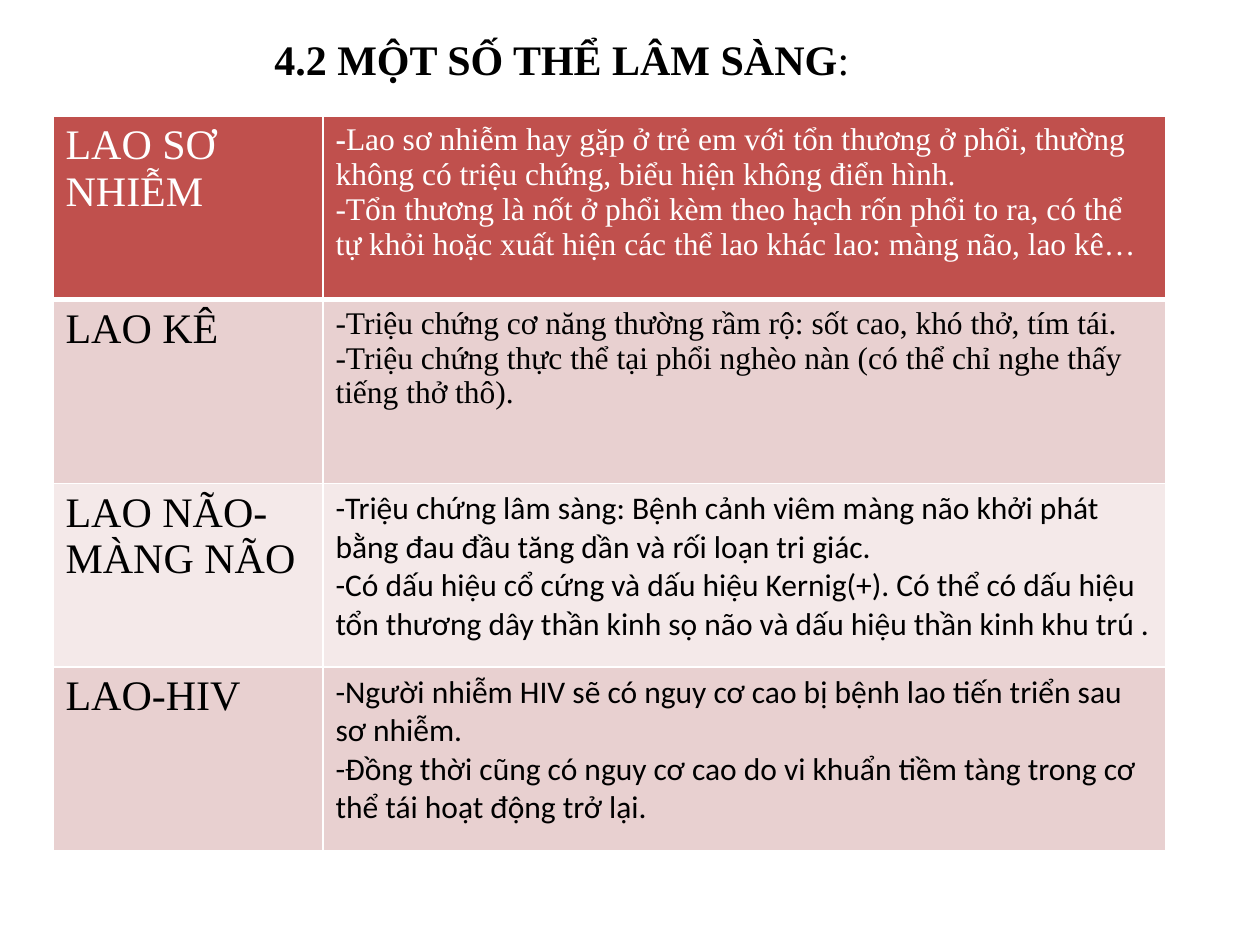
"""Build a slide with a table of the clinical forms of tuberculosis."""
import pptx
import pptx.dml.color
import pptx.enum.text
import pptx.oxml
import pptx.oxml.ns
import pptx.util

PX = 914400 / 126
COLORS = {
    "black": "000000",
    "white": "FFFFFF",
    "header": "C0504D",
    "dark_band": "E8D0D0",
    "light_band": "F4E9E9",
}
SERIF = "Times New Roman"
SANS = "Calibri"
TITLE = [("4.2 MỘT SỐ THỂ LÂM SÀNG", True), (": ", False)]
ROWS = [
    ("header", "white", SERIF, "LAO SƠ NHIỄM", [
        [("-", True), ("Lao sơ nhiễm hay gặp ở trẻ em với tổn thương ở phổi, thường không có triệu chứng, biểu hiện không điển hình.", False)],
        [("-Tổn thương là nốt ở phổi kèm theo hạch rốn phổi to ra, có thể tự khỏi hoặc xuất hiện các thể lao khác lao: màng não, lao kê…", False)],
    ]),
    ("dark_band", "black", SERIF, "LAO KÊ", [
        [("-Triệu chứng cơ năng thường rầm rộ: sốt cao, khó thở, tím tái.", False)],
        [("-Triệu chứng thực thể tại phổi nghèo nàn (có thể chỉ nghe thấy", False)],
        [("tiếng thở thô).", False)],
    ]),
    ("light_band", "black", SANS, "LAO NÃO-MÀNG NÃO", [
        [("-Triệu chứng lâm sàng: Bệnh cảnh viêm màng não khởi phát bằng đau đầu tăng dần và rối loạn tri giác.", False)],
        [("-Có dấu hiệu cổ cứng và dấu hiệu Kernig(+). Có thể có dấu hiệu tổn thương dây thần kinh sọ não và dấu hiệu thần kinh khu trú .", False)],
    ]),
    ("dark_band", "black", SANS, "LAO-HIV", [
        [("-Người nhiễm HIV sẽ có nguy cơ cao bị bệnh lao tiến triển sau sơ nhiễm.", False)],
        [("-Đồng thời cũng có nguy cơ cao do vi khuẩn tiềm tàng trong cơ thể tái hoạt động trở lại.", False)],
    ]),
]


def write_text(text_frame, paragraphs, font_name, size, color):
    for index, runs in enumerate(paragraphs):
        paragraph = text_frame.add_paragraph() if index else text_frame.paragraphs[0]
        for text, bold in runs:
            run = paragraph.add_run()
            run.text = text
            formats = {"name": font_name, "size": pptx.util.Pt(size), "bold": bold}
            for name, value in formats.items():
                setattr(run.font, name, value)
            run.font.color.rgb = pptx.dml.color.RGBColor.from_string(COLORS[color])


def add_border(cell, side, width):
    cell._tc.get_or_add_tcPr().append(pptx.oxml.parse_xml(
        f'<a:ln{side} {pptx.oxml.ns.nsdecls("a")} w="{pptx.util.Pt(width)}"><a:solidFill>'
        f'<a:srgbClr val="{COLORS["white"]}"/></a:solidFill></a:ln{side}>'
    ))


presentation = pptx.Presentation()
presentation.slide_width = round(1260 * PX)
presentation.slide_height = round(945 * PX)
slide = presentation.slides.add_slide(presentation.slide_layouts[5])

title = slide.shapes.title
for name, value in {"left": 0, "top": 1, "width": 1134, "height": 116}.items():
    setattr(title, name, round(value * PX))
title.text_frame.vertical_anchor = pptx.enum.text.MSO_ANCHOR.MIDDLE
write_text(title.text_frame, [TITLE], SERIF, 24, "black")
title.text_frame.paragraphs[0].alignment = pptx.enum.text.PP_ALIGN.CENTER

frame = [round(value * PX) for value in (53, 116, 1113, 735)]
table = slide.shapes.add_table(len(ROWS), 2, *frame).table
for column, width in zip(table.columns, (270, 843)):
    column.width = round(width * PX)

for row_index, (fill, color, body_font, heading, body) in enumerate(ROWS):
    contents = [([[(heading, False)]], SERIF, 24), (body, body_font, 18)]
    for column_index, (paragraphs, font_name, size) in enumerate(contents):
        cell = table.cell(row_index, column_index)
        write_text(cell.text_frame, paragraphs, font_name, size, color)
        top_width = 3 if row_index == 1 else 1
        bottom_width = 3 if row_index == 0 else 1
        for side, width in {"L": 1, "R": 1, "T": top_width, "B": bottom_width}.items():
            add_border(cell, side, width)
        cell.fill.solid()
        cell.fill.fore_color.rgb = pptx.dml.color.RGBColor.from_string(COLORS[fill])

presentation.save("out.pptx")
